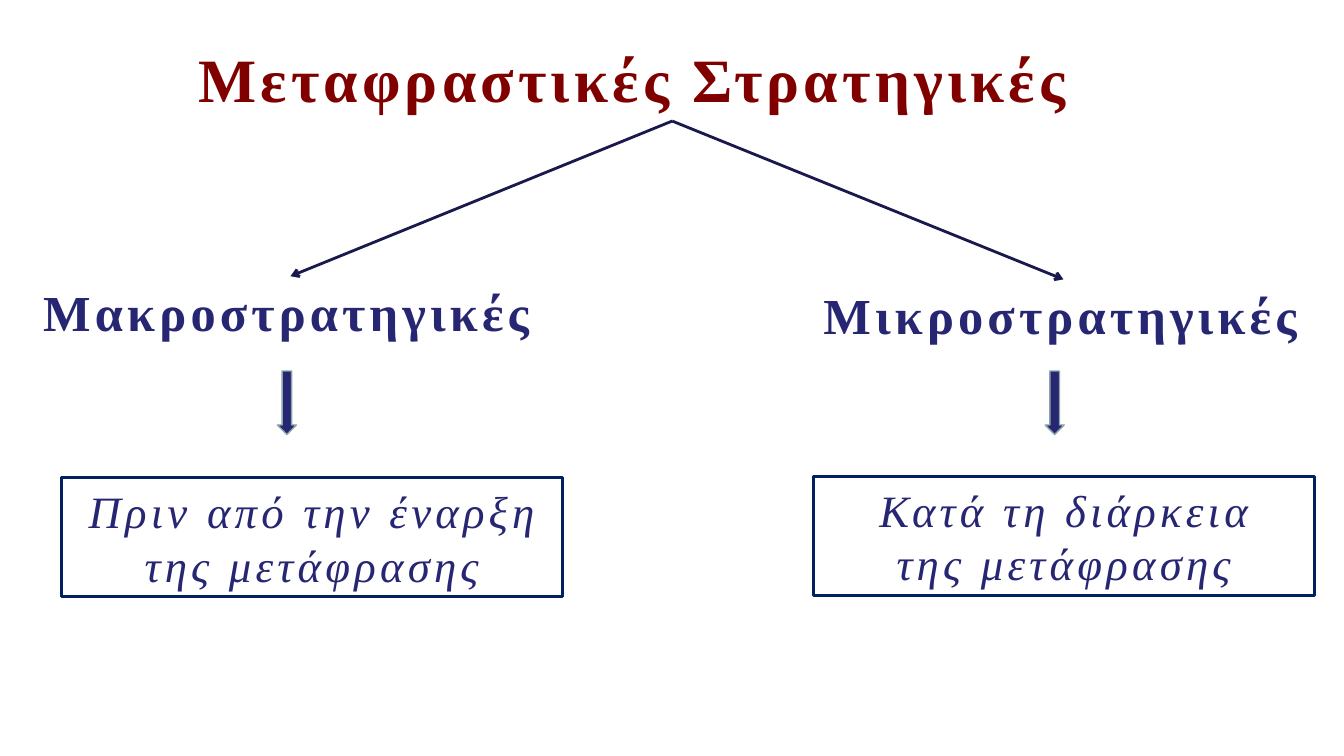
"""Build a slide that divides translation strategies into two branches."""
from dataclasses import dataclass

from lxml import etree
from pptx import Presentation
from pptx.dml.color import RGBColor
from pptx.enum.shapes import MSO_CONNECTOR, MSO_SHAPE
from pptx.enum.text import MSO_ANCHOR, MSO_AUTO_SIZE, PP_ALIGN
from pptx.oxml.ns import qn
from pptx.shapes.autoshape import Shape
from pptx.slide import Slide
from pptx.text.text import TextFrame
from pptx.util import Cm, Pt

STRAIGHT = MSO_CONNECTOR.STRAIGHT
RECTANGLE = MSO_SHAPE.RECTANGLE
DOWN_ARROW = MSO_SHAPE.DOWN_ARROW
TOP = MSO_ANCHOR.TOP
MIDDLE = MSO_ANCHOR.MIDDLE
FIT_SHAPE = MSO_AUTO_SIZE.SHAPE_TO_FIT_TEXT
CENTER = PP_ALIGN.CENTER
JUSTIFY = PP_ALIGN.JUSTIFY


@dataclass(frozen=True)
class Theme:
    """Colours, font and type sizes of the slide."""

    title: RGBColor = RGBColor(0x80, 0x00, 0x00)
    ink: RGBColor = RGBColor(0x26, 0x26, 0x73)
    branch_line: RGBColor = RGBColor(0x19, 0x19, 0x4D)
    box_line: RGBColor = RGBColor(0x00, 0x20, 0x60)
    arrow_line: RGBColor = RGBColor(0x8A, 0xA6, 0xA8)
    font: str = "Times New Roman"
    title_size: float = 44
    label_size: float = 36
    box_size: float = 32
    letter_spacing: float = 3


@dataclass(frozen=True)
class Area:
    """Position and size in centimetres."""

    left: float
    top: float
    width: float
    height: float

    def lengths(self) -> tuple[Cm, Cm, Cm, Cm]:
        """Return the four measures as lengths."""
        return Cm(self.left), Cm(self.top), Cm(self.width), Cm(self.height)


@dataclass(frozen=True)
class Branch:
    """One kind of strategy with its arrows and explanation."""

    label: str
    label_area: Area
    line_end: float
    arrow_left: float
    lines: tuple[str, ...]
    box_area: Area
    box_line_width: float


THEME = Theme()
TITLE_AREA = Area(4.75, 0.91, 23.52, 2.13)
FORK = (16.94, 3.05)
BRANCHES = (
    Branch("Μακροστρατηγικές", Area(0.84, 6.96, 12.98, 1.8), 7.32, 6.99,
           ("Πριν από την έναρξη", "της μετάφρασης"),
           Area(1.55, 12.04, 12.62, 3), 2.25),
    Branch("Μικροστρατηγικές", Area(20.5, 7.04, 12.62, 1.8), 26.8, 26.34,
           ("Κατά τη διάρκεια", "της μετάφρασης"),
           Area(20.5, 12.01, 12.62, 3), 2),
)


def write_text(frame: TextFrame, lines: tuple[str, ...], *, size: float,
               color: RGBColor, alignment: PP_ALIGN, anchor: MSO_ANCHOR = TOP,
               bold: bool = False, italic: bool = False) -> None:
    """Write one formatted paragraph for each line."""
    frame.word_wrap = True
    frame.auto_size = FIT_SHAPE
    frame.vertical_anchor = anchor
    for index, line in enumerate(lines):
        paragraph = frame.add_paragraph() if index else frame.paragraphs[0]
        paragraph.alignment = alignment
        run = paragraph.add_run()
        run.text = line
        run.font.name = THEME.font
        run.font.size = Pt(size)
        run.font.bold = bold
        run.font.italic = italic
        run.font.color.rgb = color
        run._r.get_or_add_rPr().set("spc", str(round(THEME.letter_spacing * 100)))


def add_heading(slide: Slide, text: str, area: Area, size: float,
                color: RGBColor) -> None:
    """Add a bold line of text."""
    box = slide.shapes.add_textbox(*area.lengths())
    write_text(box.text_frame, (text,), size=size, color=color,
               alignment=JUSTIFY, bold=True)


def add_outlined_shape(slide: Slide, kind: MSO_SHAPE, area: Area,
                       color: RGBColor, width: float) -> Shape:
    """Add an outlined shape without a shadow."""
    shape = slide.shapes.add_shape(kind, *area.lengths())
    shape.shadow.inherit = False
    shape.line.color.rgb = color
    shape.line.width = Pt(width)
    return shape


def add_branch_line(slide: Slide, end_left: float, end_top: float) -> None:
    """Draw an open-headed arrow from the fork to a label."""
    connector = slide.shapes.add_connector(
        STRAIGHT, Cm(FORK[0]), Cm(FORK[1]), Cm(end_left), Cm(end_top))
    connector.line.color.rgb = THEME.branch_line
    connector.line.width = Pt(2)
    etree.SubElement(connector.line._get_or_add_ln(), qn("a:tailEnd"), type="arrow")
    etree.SubElement(connector._element.spPr, qn("a:effectLst"))


def add_branch(slide: Slide, branch: Branch) -> None:
    """Draw a branch from its line down to its explanation."""
    add_heading(slide, branch.label, branch.label_area, THEME.label_size, THEME.ink)
    add_branch_line(slide, branch.line_end, branch.label_area.top)
    box = add_outlined_shape(slide, RECTANGLE, branch.box_area,
                             THEME.box_line, branch.box_line_width)
    box.fill.background()
    write_text(box.text_frame, branch.lines, size=THEME.box_size, color=THEME.ink,
               alignment=CENTER, anchor=MIDDLE, italic=True)
    arrow = add_outlined_shape(slide, DOWN_ARROW,
                               Area(branch.arrow_left, 9.35, 0.48, 1.6),
                               THEME.arrow_line, 1)
    arrow.fill.solid()
    arrow.fill.fore_color.rgb = THEME.ink


def main() -> None:
    """Build and save the presentation."""
    presentation = Presentation()
    presentation.slide_width = Cm(33.87)
    presentation.slide_height = Cm(19.05)
    slide = presentation.slides.add_slide(presentation.slide_layouts[6])
    add_heading(slide, "Μεταφραστικές Στρατηγικές", TITLE_AREA,
                THEME.title_size, THEME.title)
    for branch in BRANCHES:
        add_branch(slide, branch)
    presentation.save("out.pptx")


if __name__ == "__main__":
    main()
